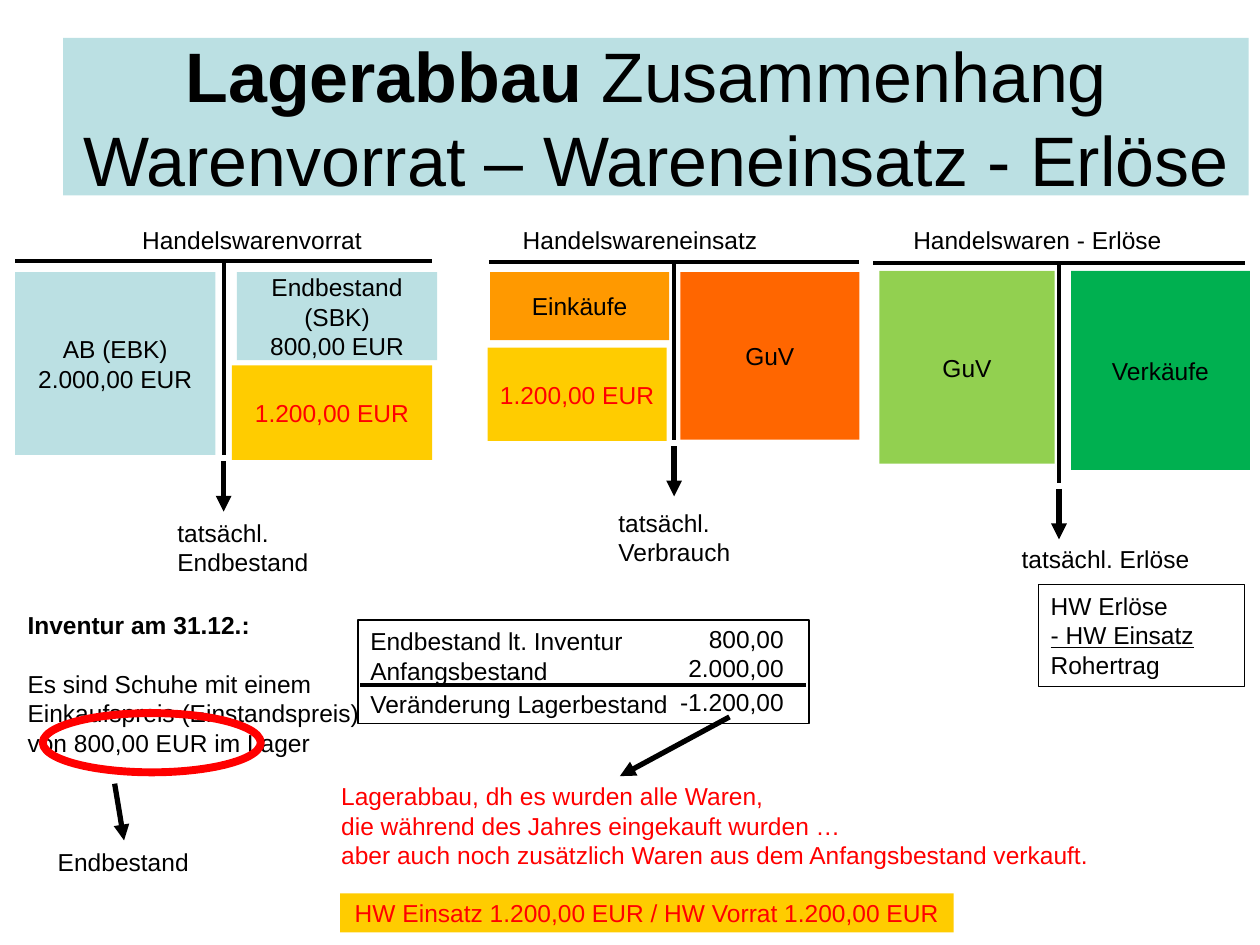
from dataclasses import dataclass

from lxml.etree import SubElement
from pptx import Presentation
from pptx.dml.color import RGBColor
from pptx.enum.shapes import MSO_CONNECTOR, MSO_SHAPE
from pptx.enum.text import MSO_ANCHOR, PP_ALIGN
from pptx.oxml.ns import qn
from pptx.util import Inches, Pt

COLS, ROWS = 100, 75
UNIT = Inches(10) / COLS
BLACK, RED = "000000", "FF0000"
PALE_BLUE, YELLOW = "BBE0E3", "FFCC00"
AMOUNT = "1.200,00 EUR"


@dataclass
class Line:
    """One paragraph of text with its own emphasis or spacing."""
    text: str
    bold: bool = False
    underline: bool = False
    before: float = 0
    spacing: float = 1


def grid(*cells):
    """Turn columns and rows of the slide grid into EMU."""
    return [round(c * UNIT) for c in cells]


def rgb(hex_color):
    return RGBColor.from_string(hex_color)


def add_run(p, text, size=14, color=BLACK, bold=False, underline=False):
    r = p.add_run()
    r.text = text
    r.font.name = "Arial"
    r.font.size = Pt(size)
    r.font.color.rgb = rgb(color)
    r.font.bold = bold
    r.font.underline = underline


def write(sp, lines, color=BLACK, align=PP_ALIGN.LEFT, anchor=MSO_ANCHOR.TOP, wrap=False):
    tf = sp.text_frame
    tf.word_wrap = wrap
    tf.vertical_anchor = anchor
    for i, line in enumerate(lines):
        if isinstance(line, str):
            line = Line(line)
        p = tf.add_paragraph() if i else tf.paragraphs[0]
        p.alignment = align
        p.space_before = Pt(line.before)
        p.line_spacing = line.spacing
        add_run(p, line.text, color=color, bold=line.bold, underline=line.underline)


def add_label(s, at, *lines, **style):
    sp = s.shapes.add_textbox(*grid(*at))
    write(sp, lines, **style)
    return sp


def add_outline(s, preset, at, fill=None, line=None, width=1):
    sp = s.shapes.add_shape(preset, *grid(*at))
    sp.shadow.inherit = False
    if fill:
        sp.fill.solid()
        sp.fill.fore_color.rgb = rgb(fill)
    else:
        sp.fill.background()
    if line:
        sp.line.color.rgb = rgb(line)
        sp.line.width = Pt(width)
    else:
        sp.line.fill.background()
    return sp


def add_block(s, at, fill, *lines, color=BLACK):
    sp = add_outline(s, MSO_SHAPE.RECTANGLE, at, fill)
    write(sp, lines, color, PP_ALIGN.CENTER, MSO_ANCHOR.MIDDLE)


def add_frame(s, at, width, *lines):
    sp = add_outline(s, MSO_SHAPE.RECTANGLE, at, line=BLACK, width=width)
    write(sp, lines, wrap=True)


def add_line(s, start, end, width=2.25, arrow=False):
    cn = s.shapes.add_connector(MSO_CONNECTOR.STRAIGHT, *grid(*start, *end))
    cn.line.color.rgb = rgb(BLACK)
    cn.line.width = Pt(width)
    if arrow:
        SubElement(cn.line._get_or_add_ln(), qn("a:tailEnd"), type="triangle")
    SubElement(cn._element.spPr, qn("a:effectLst"))
    return cn


def add_account(s, name, name_left, left, top, width, height):
    """T-account: heading, bar, stem and the arrow to its result."""
    mid, bottom = left + width / 2, top + height
    add_label(s, (name_left, 17.4, 25.3, 3.4), name, wrap=True)
    add_line(s, (left, top), (left + width, top))
    add_line(s, (mid, top), (mid, bottom))
    add_line(s, (mid, bottom + 0.5), (mid, bottom + 4.5), 3, arrow=True)


def add_title(s):
    sp = add_outline(s, MSO_SHAPE.RECTANGLE, (5, 3, 94.1, 12.5), PALE_BLUE)
    tf = sp.text_frame
    tf.word_wrap = True
    tf.vertical_anchor = MSO_ANCHOR.MIDDLE
    p = tf.paragraphs[0]
    p.alignment = PP_ALIGN.CENTER
    add_run(p, "Lagerabbau", 40, bold=True)
    add_run(p, " Zusammenhang ", 40)
    p.add_line_break()
    add_run(p, "Warenvorrat – Wareneinsatz - Erlöse", 40)


def add_accounts(s):
    add_account(s, "Handelswarenvorrat", 10.3, 1.2, 20.7, 33.1, 15.4)
    add_block(s, (1.2, 21.6, 15.9, 14.5), PALE_BLUE, "AB (EBK)", "2.000,00 EUR")
    add_block(s, (18.4, 29, 15.9, 7.5), YELLOW, AMOUNT, color=RED)
    add_block(s, (18.8, 21.6, 15.9, 7), PALE_BLUE, "Endbestand", "(SBK)", "800,00 EUR")
    add_label(s, (13.1, 40.6, 13, 5.7), "tatsächl. Endbestand", wrap=True)

    add_account(s, "Handelswareneinsatz", 40.5, 38.8, 20.8, 29.4, 14.1)
    add_block(s, (38.9, 21.6, 14.2, 5.4), "FF9900", "Einkäufe")
    add_block(s, (38.7, 27.6, 14.2, 7.4), YELLOW, AMOUNT, color=RED)
    add_block(s, (54, 21.6, 14.2, 13.3), "FF6600", "GuV")
    add_label(s, (48.1, 39.8, 13, 5.7), "tatsächl. Verbrauch", wrap=True)

    add_account(s, "Handelswaren - Erlöse", 71.5, 69.3, 20.9, 29.5, 17.4)
    add_block(s, (85, 21.5, 14.2, 15.8), "00B050", "Verkäufe")
    add_block(s, (69.8, 21.5, 13.9, 15.3), "92D050", "GuV")
    add_label(s, (80.1, 42.7, 18.3, 3.4), "tatsächl. Erlöse", wrap=True)


def add_stocktaking(s):
    add_label(s, (1.2, 47.9, 28.5, 12.8),
              Line("Inventur am 31.12.:", bold=True),
              Line("Es sind Schuhe mit einem", before=17),
              "Einkaufspreis (Einstandspreis)",
              "von 800,00 EUR im Lager")
    add_outline(s, MSO_SHAPE.OVAL, (3.4, 56.6, 17.3, 4.7), line=RED, width=4.5)
    closing = add_label(s, (3.6, 66.7, 12.5, 3.4), "Endbestand")
    add_line(s, (9.1, 62.2), (9.9, 66.7), 3, arrow=True).end_connect(closing, 0)


def add_stock_change(s):
    add_frame(s, (28.4, 49.2, 35.8, 8.2), 0.75,
              "Endbestand lt. Inventur", "Anfangsbestand",
              Line("Veränderung Lagerbestand", spacing=1.15))
    add_label(s, (39.7, 51.9, 2.7, 3.4), "-")
    add_line(s, (28.6, 54.4), (64, 54.4))
    add_label(s, (52.4, 49, 10.8, 8.2), "800,00", "2.000,00",
              Line("-1.200,00", spacing=1.15), align=PP_ALIGN.RIGHT)
    add_line(s, (57.9, 56.9), (49.2, 61.6), 3, arrow=True)
    add_label(s, (26.1, 61.5, 61.6, 8.1),
              "Lagerabbau, dh es wurden alle Waren,",
              "die während des Jahres eingekauft wurden …",
              "aber auch noch zusätzlich Waren aus dem Anfangsbestand verkauft.",
              color=RED)
    add_block(s, (27, 70.9, 48.7, 3.1), YELLOW,
              f"HW Einsatz {AMOUNT} / HW Vorrat {AMOUNT}", color=RED)


def main():
    prs = Presentation()
    prs.slide_width, prs.slide_height = grid(COLS, ROWS)
    s = prs.slides.add_slide(prs.slide_layouts[6])
    add_title(s)
    add_accounts(s)
    add_stocktaking(s)
    add_stock_change(s)
    add_frame(s, (82.4, 46.4, 16.4, 8.1), 0.5,
              "HW Erlöse", Line("- HW Einsatz", underline=True), "Rohertrag")
    prs.save("out.pptx")


if __name__ == "__main__":
    main()
